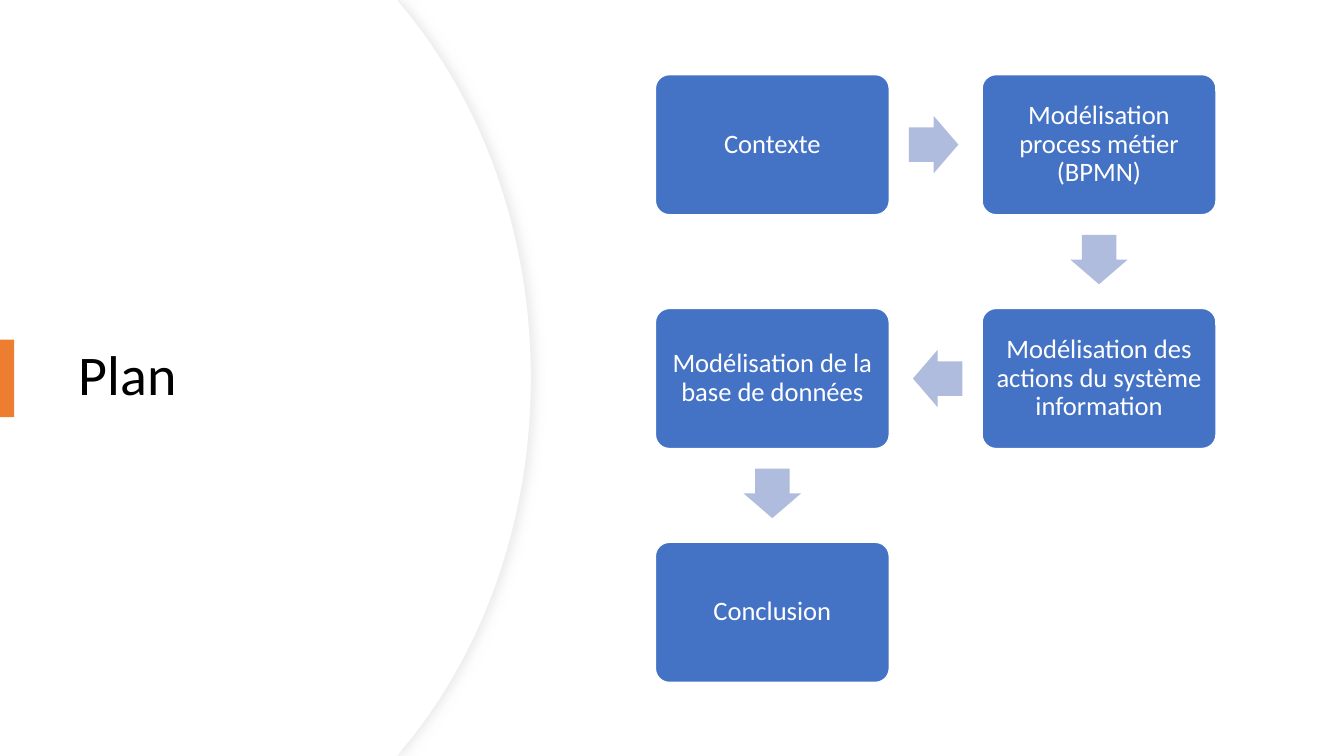
import dataclasses

import lxml.etree
import pptx
import pptx.dml.color
import pptx.enum.shapes
import pptx.enum.text
import pptx.oxml
import pptx.oxml.ns
import pptx.util

SHAPE = pptx.enum.shapes.MSO_SHAPE
ALIGN = pptx.enum.text.PP_ALIGN
ANCHOR = pptx.enum.text.MSO_ANCHOR


@dataclasses.dataclass(frozen=True)
class Theme:
    font: str = "Calibri"
    head: int = 40
    body: int = 19
    ink: str = "000000"
    white: str = "FFFFFF"
    edge: str = "EFEFEF"
    shade: str = "D9D9D9"
    accent: str = "ED7D31"
    box: str = "4472C4"
    arrow: str = "B0BCDE"


THEME = Theme()
WIDE, HIGH = 1333, 750
LEFT, TOP = 650, 74
BOX_W, BOX_H = 232, 139
COL, ROW = 324, 232
ARROW_W, ARROW_H = 49, 57
STEPS = [
    ("Contexte", 0, 0),
    ("Modélisation process métier (BPMN)", 1, 0),
    ("Modélisation des actions du système information", 1, 1),
    ("Modélisation de la base de données", 0, 1),
    ("Conclusion", 0, 2),
]
TURNS = {(1, 0): 0, (0, 1): 90, (-1, 0): 180}


def px(count):
    return pptx.util.Emu(round(count * 9144))


def color(code):
    return pptx.dml.color.RGBColor.from_string(code)


def paint(shape, fill, line=None, width=1):
    shape.shadow.inherit = False
    shape.fill.solid()
    shape.fill.fore_color.rgb = color(fill)
    if line:
        shape.line.color.rgb = color(line)
        shape.line.width = pptx.util.Pt(width)
    else:
        shape.line.fill.background()


def write(shape, text, size, ink, align=ALIGN.LEFT, inset=None):
    frame = shape.text_frame
    frame.text = text
    frame.word_wrap = True
    frame.auto_size = pptx.enum.text.MSO_AUTO_SIZE.NONE
    frame.vertical_anchor = ANCHOR.MIDDLE
    if inset is not None:
        frame.margin_left = frame.margin_right = px(inset)
        frame.margin_top = frame.margin_bottom = px(inset)
    para = frame.paragraphs[0]
    para.alignment = align
    para.line_spacing = 0.9
    font = para.runs[0].font
    font.name = THEME.font
    font.size = pptx.util.Pt(size)
    font.color.rgb = color(ink)


def add_block(slide, kind, left, top, width, height, fill, line=None):
    block = slide.shapes.add_shape(kind, px(left), px(top), px(width), px(height))
    paint(block, fill, line)
    return block


def bend(shape, first):
    name = pptx.oxml.ns.qn
    legs = list(shape.element.iter(name("a:lnTo")))[first:first + 3]
    arc = lxml.etree.Element(name("a:cubicBezTo"))
    legs[0].addprevious(arc)
    for leg in legs:
        arc.append(leg[0])
        leg.getparent().remove(leg)


def add_panel(slide, right, line=None):
    upper = [(394, 0), (right - 126, 8), (right - 48, 102), (right, 232)]
    lower = [(x, HIGH - y) for x, y in reversed(upper)]
    points = upper + [(right, HIGH // 2)] + lower + [(0, HIGH)]
    build = slide.shapes.build_freeform(0, 0)
    build.add_line_segments([(px(x), px(y)) for x, y in points], close=True)
    panel = build.convert_to_shape()
    for _ in range(2):
        bend(panel, 2)
    paint(panel, THEME.white, line, 0.75)
    return panel


def add_shadow(shape):
    name = pptx.oxml.ns.qn
    effects = shape.element.spPr.find(name("a:effectLst"))
    shadow = lxml.etree.SubElement(
        effects, name("a:outerShdw"), blurRad=str(pptx.util.Pt(7)),
        dist=str(pptx.util.Pt(3)), dir="0", algn="l", rotWithShape="0",
    )
    tint = lxml.etree.SubElement(shadow, name("a:srgbClr"), val=THEME.shade)
    lxml.etree.SubElement(tint, name("a:alpha"), val="50000")


def add_title(slide, text):
    title = slide.shapes.title
    title.left, title.top = px(68), px(127)
    title.width, title.height = px(394), px(495)
    write(title, text, THEME.head, THEME.ink)
    title.element.getparent().append(title.element)


def add_step(slide, text, col, row):
    box = add_block(slide, SHAPE.ROUNDED_RECTANGLE, LEFT + col * COL,
                    TOP + row * ROW, BOX_W, BOX_H, THEME.box, THEME.white)
    box.adjustments[0] = 0.1
    write(box, text, THEME.body, THEME.white, align=ALIGN.CENTER, inset=8)


def add_arrow(slide, start, end):
    way = (end[0] - start[0], end[1] - start[1])
    mid_x = LEFT + (start[0] + end[0]) * COL / 2 + BOX_W / 2 - 2 * way[0]
    mid_y = TOP + (start[1] + end[1]) * ROW / 2 + BOX_H / 2 - 2 * way[1]
    arrow = add_block(slide, SHAPE.RIGHT_ARROW, mid_x - ARROW_W / 2,
                      mid_y - ARROW_H / 2, ARROW_W, ARROW_H, THEME.arrow)
    arrow.adjustments[0] = 0.6
    arrow.adjustments[1] = 0.5
    arrow.rotation = TURNS[way]


def main():
    deck = pptx.Presentation()
    deck.slide_width, deck.slide_height = px(WIDE), px(HIGH)
    slide = deck.slides.add_slide(deck.slide_layouts[5])
    add_shadow(add_panel(slide, 527, THEME.edge))
    add_panel(slide, 526)
    add_title(slide, "Plan")
    add_block(slide, SHAPE.RECTANGLE, 0, 337, 14, 77, THEME.accent)
    for text, col, row in STEPS:
        add_step(slide, text, col, row)
    for start, end in zip(STEPS, STEPS[1:]):
        add_arrow(slide, start[1:], end[1:])
    deck.save("out.pptx")


if __name__ == "__main__":
    main()
